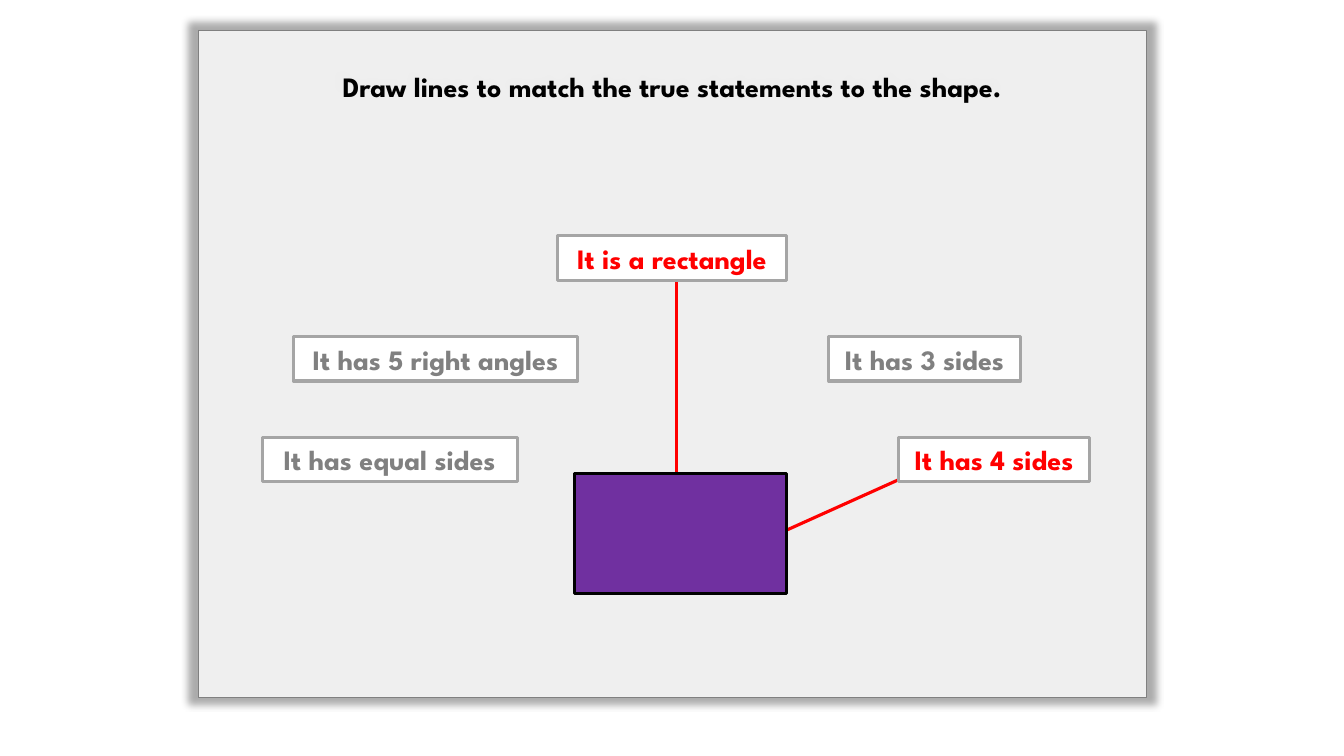
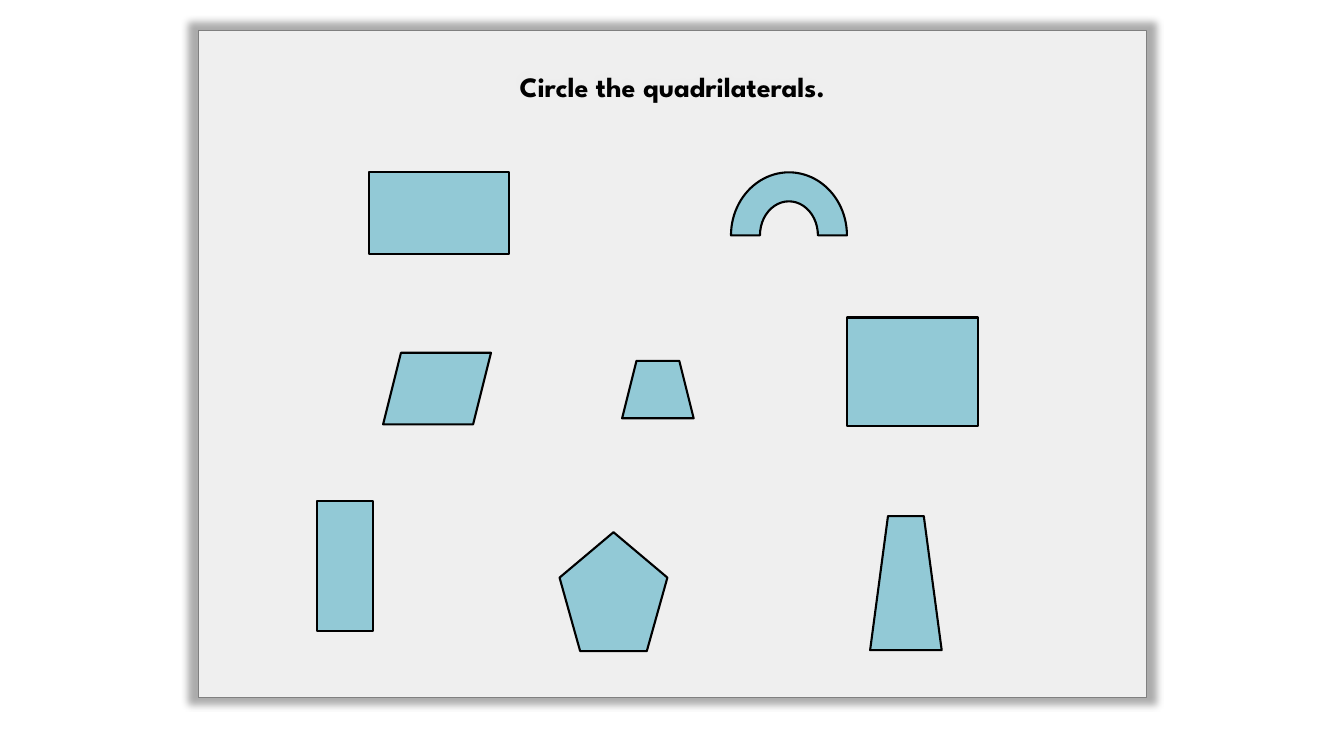
from lxml import etree
from pptx import Presentation
from pptx.dml.color import RGBColor
from pptx.enum.shapes import MSO_CONNECTOR, MSO_SHAPE
from pptx.enum.text import MSO_ANCHOR, PP_ALIGN
from pptx.oxml import parse_xml
from pptx.oxml.ns import nsdecls, qn
from pptx.util import Emu, Pt

# Shared style; lengths are px at 100 to the inch
SCALE = 9144
SLIDE_SIZE = (1333, 750)
FONT = "League Spartan"
WHITE, BLACK, RED, GREY = "FFFFFF", "000000", "FF0000", "808080"
LABEL_LINE, PURPLE, TEAL = "A5A5A5", "7030A0", "92C9D6"
PANEL = (197, 30, 940, 662)
PANEL_OPACITY = 82
TITLE_INSET = 39
LABEL_HEIGHT = 44

# Slide 1: statements as (text, left, top, width, is true)
MATCH_TITLE = "Draw lines to match the true statements to the shape."
STATEMENTS = [
    ("It has 5 right angles", 291, 334, 282, False),
    ("It is a rectangle", 553, 234, 227, True),
    ("It has 3 sides", 822, 334, 190, False),
    ("It has equal sides", 260, 434, 253, False),
    ("It has 4 sides", 891, 434, 190, True),
]
RECTANGLE = (570, 470, 210, 119)
MATCH_LINES = [((900, 472), (780, 526)), ((671, 278), (671, 470))]

# Slide 2: shapes as (kind, box)
CIRCLE_TITLE = "Circle the quadrilaterals."
FIGURES = [
    (MSO_SHAPE.PARALLELOGRAM, (380, 350, 107, 71)),
    (MSO_SHAPE.RECTANGLE, (366, 171, 139, 81)),
    (MSO_SHAPE.RECTANGLE, (314, 497, 56, 129)),
    (MSO_SHAPE.TRAPEZOID, (863, 512, 71, 133)),
    (MSO_SHAPE.RECTANGLE, (840, 315, 130, 108)),
    (MSO_SHAPE.REGULAR_PENTAGON, (555, 528, 107, 118)),
    (MSO_SHAPE.BLOCK_ARC, (725, 171, 115, 125)),
    (MSO_SHAPE.TRAPEZOID, (617, 358, 71, 57)),
]


def px(length):
    return Emu(length * SCALE)


def color(value):
    return RGBColor.from_string(value)


def add_figure(slide, kind, box, fill, line, line_width):
    shape = slide.shapes.add_shape(kind, *map(px, box))
    shape.shadow.inherit = False
    shape.fill.solid()
    shape.fill.fore_color.rgb = color(fill)
    shape.line.color.rgb = color(line)
    shape.line.width = Pt(line_width)
    return shape


def set_text(shape, text, text_color=BLACK, size=20, bold=True,
             anchor=MSO_ANCHOR.MIDDLE, wrap=False, inset_top=5):
    frame = shape.text_frame
    frame.word_wrap = wrap
    frame.vertical_anchor = anchor
    frame.margin_top = px(inset_top)
    paragraph = frame.paragraphs[0]
    paragraph.alignment = PP_ALIGN.CENTER
    run = paragraph.add_run()
    run.text = text
    run.font.name = FONT
    run.font.size = Pt(size)
    run.font.bold = bold
    run.font.color.rgb = color(text_color)


def add_line(slide, start, end):
    line = slide.shapes.add_connector(MSO_CONNECTOR.STRAIGHT, *map(px, start + end))
    line.line.color.rgb = color(RED)
    line.line.width = Pt(2.25)
    etree.SubElement(line._element.spPr, qn("a:effectLst"))


def add_panel_slide(presentation, title):
    """Add a blank slide with the translucent, softly shadowed title panel."""
    slide = presentation.slides.add_slide(presentation.slide_layouts[6])
    panel = add_figure(slide, MSO_SHAPE.RECTANGLE, PANEL, WHITE, GREY, 1)
    set_text(panel, title, anchor=MSO_ANCHOR.TOP, wrap=True, inset_top=TITLE_INSET)
    properties = panel._element.spPr
    fill_color = properties.find(qn("a:solidFill")).find(qn("a:srgbClr"))
    etree.SubElement(fill_color, qn("a:alpha"), val=str(PANEL_OPACITY * 1000))
    properties.find(qn("a:effectLst")).append(parse_xml(
        f'<a:outerShdw {nsdecls("a")} blurRad="{Pt(5)}" sx="102000" sy="102000" '
        f'algn="ctr" rotWithShape="0"><a:srgbClr val="{BLACK}">'
        '<a:alpha val="40000"/></a:srgbClr></a:outerShdw>'))
    return slide


def build_match_slide(presentation):
    slide = add_panel_slide(presentation, MATCH_TITLE)
    for start, end in MATCH_LINES:
        add_line(slide, start, end)
    add_figure(slide, MSO_SHAPE.RECTANGLE, RECTANGLE, PURPLE, BLACK, 2.25)
    for text, left, top, width, is_true in STATEMENTS:
        box = (left, top, width, LABEL_HEIGHT)
        label = add_figure(slide, MSO_SHAPE.RECTANGLE, box, WHITE, LABEL_LINE, 2.25)
        set_text(label, text, text_color=RED if is_true else GREY)


def build_circle_slide(presentation):
    slide = add_panel_slide(presentation, CIRCLE_TITLE)
    for kind, box in FIGURES:
        add_figure(slide, kind, box, TEAL, BLACK, 1.5)


def main():
    presentation = Presentation()
    presentation.slide_width, presentation.slide_height = map(px, SLIDE_SIZE)
    build_match_slide(presentation)
    build_circle_slide(presentation)
    presentation.save("out.pptx")


if __name__ == "__main__":
    main()
